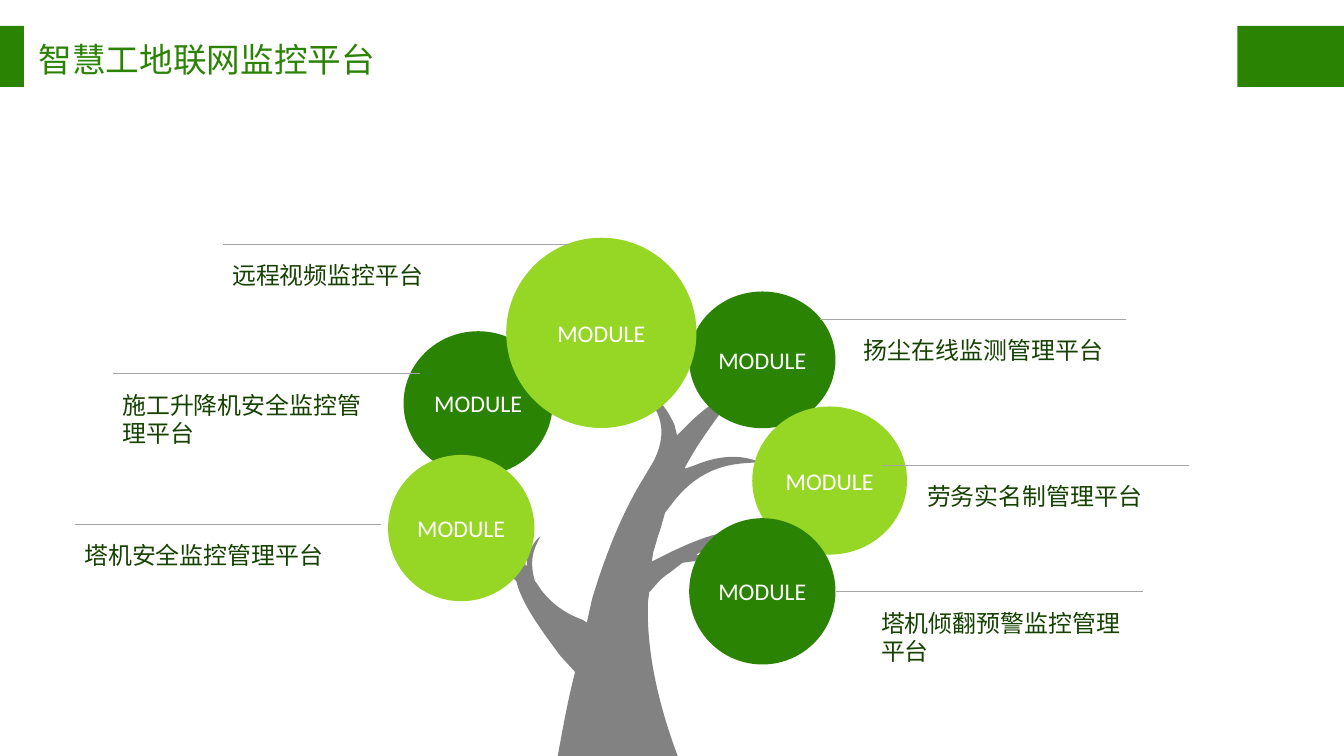
from lxml.etree import SubElement as Sub
from pptx import Presentation
from pptx.dml.color import RGBColor
from pptx.enum.shapes import MSO_CONNECTOR as Conn, MSO_SHAPE as Shape
from pptx.enum.text import MSO_ANCHOR as Anchor, MSO_AUTO_SIZE as Fit, PP_ALIGN as Align
from pptx.oxml.ns import qn
from pptx.util import Pt

GREEN = RGBColor(0x2B, 0x83, 0x03)
LIME = RGBColor(0x96, 0xD6, 0x24)
INK = RGBColor(0x16, 0x42, 0x01)
GRAY = RGBColor(0xA6, 0xA6, 0xA6)
BLACK = RGBColor(0, 0, 0)
WHITE = RGBColor(0xFF, 0xFF, 0xFF)

WIDE, HIGH = 1012.3, 569.5
LABEL = 204.5

BARS = [(0, 18), (932.1, 80.2)]

DISKS = [
    (304, 249.5, 112.3, 108.7, GREEN),
    (519.1, 219.6, 110.2, 103, GREEN),
    (566.6, 306.2, 116.6, 111.6, LIME),
    (519.1, 390.4, 110.2, 110.2, GREEN),
    (381.3, 179.1, 143.3, 143.3, LIME),
    (292.3, 342.7, 110.2, 110.2, LIME),
]

LEFT = [
    ("远程视频监控平台", 167.8, 428.4, 183.9),
    ("施工升降机安全监控管理平台", 85, 316.1, 281.5),
    ("塔机安全监控管理平台", 56.4, 287.3, 394.9),
]
RIGHT = [
    ("扬尘在线监测管理平台", 617.8, 848.2, 240.5),
    ("劳务实名制管理平台", 664.6, 895.7, 350.6),
    ("塔机倾翻预警监控管理平台", 630, 861.1, 445.7),
]

TREE = [
    (555, 292),
    (549, 305, 531, 324, 516, 352),
    (516, 353),
    (522, 351),
    (541, 343, 557, 342, 572, 348),
    (562, 350, 531, 345, 505, 381),
    (501, 386),
    (497, 400),
    (495, 405, 494, 410, 492, 416),
    (491, 423),
    (495, 421),
    (528, 404, 552, 396, 575, 400),
    (567, 403, 551, 405, 531, 414),
    (524, 418),
    (529, 418),
    (546, 420, 557, 423, 564, 429),
    (557, 428, 546, 421, 521, 423),
    (514, 424),
    (505, 431),
    (500, 434, 496, 438, 491, 444),
    (489, 446),
    (488, 454),
    (487, 487, 494, 526, 511, 571),
    (420, 570),
    (424, 548, 428, 526, 433, 507),
    (433, 506),
    (422, 494),
    (408, 475, 396, 459, 390, 442),
    (389, 438),
    (384, 433),
    (366, 415, 351, 414, 344, 412),
    (354, 410, 366, 415, 382, 423),
    (385, 426),
    (384, 416),
    (383, 408, 384, 399, 386, 390),
    (388, 396, 390, 410, 396, 426),
    (397, 426),
    (397, 420),
    (400, 413, 402, 408, 407, 404),
    (405, 409, 397, 419, 403, 438),
    (404, 439),
    (408, 445),
    (415, 454, 425, 462, 439, 467),
    (442, 469),
    (446, 451),
    (456, 418, 468, 388, 483, 363),
    (492, 348),
    (509, 315, 486, 300, 482, 292),
    (495, 298, 502, 307, 508, 320),
    (510, 328),
    (515, 323),
    (526, 311, 540, 301, 555, 292),
]


def paint(shape, color):
    shape.shadow.inherit = False
    shape.fill.solid()
    shape.fill.fore_color.rgb = color
    shape.line.fill.background()


def write(frame, text, size, face, color, align=Align.LEFT):
    frame.word_wrap = True
    para = frame.paragraphs[0]
    para.text = text
    para.alignment = align
    font = para.font
    font.size = Pt(size)
    font.color.rgb = color
    font.name = face
    Sub(font._rPr, qn("a:ea"), typeface=face)


def center(frame):
    frame.margin_left = frame.margin_right = 0
    frame.margin_top = frame.margin_bottom = 0
    frame.vertical_anchor = Anchor.MIDDLE


def outline(shapes, dots):
    dots = [(Pt(x), Pt(y)) for x, y in dots]
    pen = shapes.build_freeform(*dots[0])
    pen.add_line_segments(dots[1:], close=True)
    return pen.convert_to_shape()


def add_bar(shapes, x, w):
    paint(shapes.add_shape(Shape.RECTANGLE, Pt(x), Pt(19.5), Pt(w), Pt(46)), GREEN)


def add_title(shapes, text, x, y, w, h):
    title = outline(shapes, [(x, y), (x + w, y), (x + w, y + h), (x, y + h)])
    title.shadow.inherit = False
    title.fill.background()
    title.line.fill.background()
    frame = title.text_frame
    center(frame)
    write(frame, text, 25.3, "Arial", GREEN)
    frame.auto_size = Fit.SHAPE_TO_FIT_TEXT


def add_tree(shapes):
    tree = outline(shapes, [part[-2:] for part in TREE])
    props = tree._element.spPr
    for node, part in zip(list(props.iter(qn("a:lnTo"))), TREE[1:]):
        if len(part) == 6:
            node.tag = qn("a:cubicBezTo")
            for x, y in (part[:2], part[2:4]):
                Sub(node, qn("a:pt"), x=str(Pt(x) - tree.left), y=str(Pt(y) - tree.top))
            node.append(node[0])
    paint(tree, BLACK)
    tint = props.find(qn("a:solidFill"))[0]
    Sub(tint, qn("a:alpha"), val="49000")


def add_disk(shapes, x, y, w, h, color):
    disk = shapes.add_shape(Shape.OVAL, Pt(x), Pt(y), Pt(w), Pt(h))
    paint(disk, color)
    center(disk.text_frame)
    write(disk.text_frame, "MODULE", 18, "Calibri", WHITE, Align.CENTER)


def add_rule(shapes, x, end, y):
    rule = shapes.add_connector(Conn.STRAIGHT, Pt(end), Pt(y), Pt(x), Pt(y))
    rule.line.color.rgb = GRAY
    rule.line.width = Pt(0.5)
    Sub(rule._element.spPr, qn("a:effectLst"))


def add_label(shapes, text, x, y):
    box = shapes.add_textbox(Pt(x), Pt(y + 9), Pt(LABEL), Pt(51))
    write(box.text_frame, text, 18, "Noto Sans CJK SC", INK)


def main():
    deck = Presentation()
    deck.slide_width, deck.slide_height = Pt(WIDE), Pt(HIGH)
    shapes = deck.slides.add_slide(deck.slide_layouts[6]).shapes
    for bar in BARS:
        add_bar(shapes, *bar)
    add_title(shapes, "智慧工地联网监控平台", 29.2, 29.2, 334.8, 30.2)
    add_tree(shapes)
    for disk in DISKS:
        add_disk(shapes, *disk)
    for text, x, end, y in LEFT + RIGHT:
        add_rule(shapes, x, end, y)
    for text, x, end, y in LEFT:
        add_label(shapes, text, x, y)
    for text, x, end, y in RIGHT:
        add_label(shapes, text, end - LABEL, y)
    deck.save("out.pptx")


if __name__ == "__main__":
    main()
